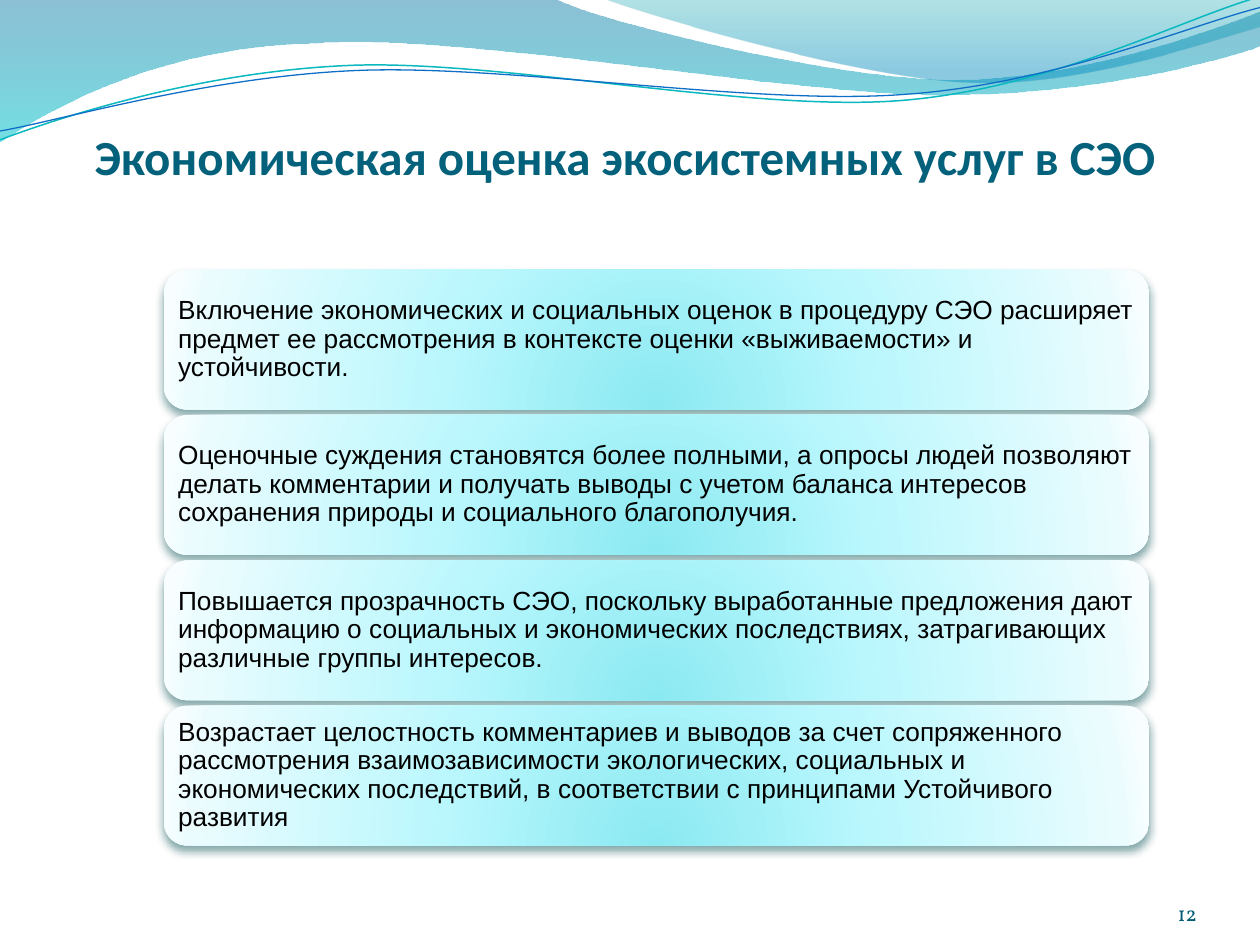
from lxml import etree
from pptx import Presentation
from pptx.dml.color import RGBColor
from pptx.enum.shapes import MSO_SHAPE
from pptx.enum.text import MSO_ANCHOR, MSO_AUTO_SIZE, PP_ALIGN
from pptx.oxml.ns import qn
from pptx.util import Inches, Pt

LEFT, RIGHT = PP_ALIGN.LEFT, PP_ALIGN.RIGHT
MIDDLE, BOTTOM = MSO_ANCHOR.MIDDLE, MSO_ANCHOR.BOTTOM
NO_AUTOFIT = MSO_AUTO_SIZE.NONE
ROUNDED = MSO_SHAPE.ROUNDED_RECTANGLE
TITLE_ONLY = 5

TITLE_TEAL = RGBColor(0x04, 0x61, 0x7B)
NUMBER_TEAL = RGBColor(0x04, 0x5D, 0x75)
BLACK = RGBColor(0x00, 0x00, 0x00)
AQUA = RGBColor(0x0A, 0xB8, 0xBF)
BLUE = RGBColor(0x0F, 0x6F, 0xC6)
SHADOW = RGBColor(0x02, 0x4B, 0x4E)
CARD_STOPS = [(0, RGBColor(0x8B, 0xE9, 0xF1), 100), (43, RGBColor(0xB9, 0xF7, 0xFD), 100),
              (93, RGBColor(0xEA, 0xFC, 0xFE), 100), (100, RGBColor(0xF8, 0xFE, 0xFF), 100)]
WIDE_STOPS = [(0, RGBColor(0x00, 0x74, 0xA1), 45), (100, RGBColor(0x00, 0xC6, 0xCF), 55)]
CORNER_STOPS = [(0, RGBColor(0x00, 0xA1, 0xA9), 30), (80, RGBColor(0x00, 0x8B, 0xBF), 45)]

WIDE_WAVE = [(0, 0), (4.4, -0.01),
             (4.76, 0.17, 6.64, 0.63, 7.58, 0.63), (8.53, 0.63, 9.58, 0.26, 10, 0.09),
             (10.01, 0.36),
             (9.83, 0.44, 8.7, 0.76, 7.46, 0.75), (6.22, 0.75, 3.82, 0.28, 2.57, 0.34),
             (1.29, 0.36, 0.46, 0.83, -0.01, 1.13)]
CORNER_WAVE = [(4.79, -0.01), (5.09, 0.11, 6.82, 0.62, 7.69, 0.65),
               (8.56, 0.69, 9.61, 0.32, 10, 0.21), (10, 0)]
AQUA_CURVE = [(0, 1.11), (0.48, 0.93, 1.58, 0.57, 2.77, 0.52),
              (3.95, 0.47, 5.93, 0.89, 7.13, 0.8), (8.33, 0.71, 9.38, 0.15, 9.98, -0.02)]
BLUE_CURVE = [(0, 1.04), (0.47, 0.96, 1.64, 0.61, 2.83, 0.56),
              (4.03, 0.51, 5.97, 0.84, 7.17, 0.75), (8.36, 0.67, 9.41, 0.21, 10, 0.06)]

BENEFITS = [
    "Включение экономических и социальных оценок в процедуру СЭО расширяет предмет ее "
    "рассмотрения в контексте оценки «выживаемости» и устойчивости.",
    "Оценочные суждения становятся более полными, а опросы людей позволяют делать комментарии "
    "и получать выводы с учетом баланса интересов сохранения природы и социального благополучия.",
    "Повышается прозрачность СЭО, поскольку выработанные предложения дают информацию о "
    "социальных и экономических последствиях, затрагивающих различные группы интересов.",
    "Возрастает целостность комментариев и выводов за счет сопряженного рассмотрения "
    "взаимозависимости экологических, социальных и экономических последствий, в соответствии "
    "с принципами Устойчивого развития",
]


def write(shape, text, *, size, font, color, bold=False, align=LEFT, anchor=MIDDLE,
          insets=(0, 0, 0, 0), spacing=None):
    frame = shape.text_frame
    frame.word_wrap = True
    frame.auto_size = NO_AUTOFIT
    frame.vertical_anchor = anchor
    (frame.margin_left, frame.margin_top,
     frame.margin_right, frame.margin_bottom) = map(Inches, insets)
    paragraph = frame.paragraphs[0]
    paragraph.alignment = align
    if spacing:
        paragraph.line_spacing = spacing
    run = paragraph.add_run()
    run.text = text
    run.font.size, run.font.name, run.font.bold = Pt(size), font, bold
    run.font.color.rgb = color


def add_color(parent, color, opacity):
    tint = etree.SubElement(parent, qn("a:srgbClr"), val=str(color))
    if opacity < 100:
        etree.SubElement(tint, qn("a:alpha"), val=str(opacity * 1000))


def fill_gradient(shape, stops, radial=False):
    shape.fill.background()
    properties = shape._element.spPr
    gradient = etree.Element(qn("a:gradFill"), rotWithShape="1")
    stop_list = etree.SubElement(gradient, qn("a:gsLst"))
    for position, color, opacity in stops:
        stop = etree.SubElement(stop_list, qn("a:gs"), pos=str(position * 1000))
        add_color(stop, color, opacity)
    if radial:
        circle = etree.SubElement(gradient, qn("a:path"), path="circle")
        etree.SubElement(circle, qn("a:fillToRect"), l="50000", t="130000", r="50000", b="-30000")
    else:
        etree.SubElement(gradient, qn("a:lin"), ang="5400000", scaled="1")
    properties.replace(properties.find(qn("a:noFill")), gradient)


def add_outline(slide, left, top, outline, close):
    points = [(left + Inches(x), top + Inches(y))
              for segment in outline for x, y in zip(segment[::2], segment[1::2])]
    builder = slide.shapes.build_freeform(*points[0])
    builder.add_line_segments(points[1:], close=close)
    shape = builder.convert_to_shape()
    shape.shadow.inherit = False
    straight = iter(list(shape._element.spPr.iter(qn("a:lnTo"))))
    for segment in outline[1:]:
        first = next(straight)
        if len(segment) == 6:
            bend = etree.Element(qn("a:cubicBezTo"))
            first.addprevious(bend)
            for line in (first, next(straight), next(straight)):
                bend.append(line[0])
                line.getparent().remove(line)
    return shape


def add_waves(slide, left, top):
    for outline, stops in ((WIDE_WAVE, WIDE_STOPS), (CORNER_WAVE, CORNER_STOPS)):
        wave = add_outline(slide, left, top, outline, True)
        wave.line.fill.background()
        fill_gradient(wave, stops)
    for outline, color, width in ((AQUA_CURVE, AQUA, 0.85), (BLUE_CURVE, BLUE, 0.75)):
        curve = add_outline(slide, left, top, outline, False)
        curve.fill.background()
        curve.line.color.rgb = color
        curve.line.width = Pt(width)


def add_title(slide, left, top, width, height):
    title = slide.shapes.title
    title.left, title.top, title.width, title.height = left, top, width, height
    write(title, "Экономическая оценка экосистемных услуг в СЭО", size=28, font="Calibri",
          color=TITLE_TEAL, bold=True, anchor=BOTTOM, insets=(0, 0.05, 0, 0))


def add_page_number(slide, left, top, width, height):
    number = slide.shapes.add_textbox(left, top, width, height)
    write(number, "12", size=12, font="Vollkorn", color=NUMBER_TEAL, align=RIGHT, anchor=BOTTOM)


def add_card(slide, text, left, top, width, height):
    card = slide.shapes.add_shape(ROUNDED, left, top, width, height)
    card.line.fill.background()
    fill_gradient(card, CARD_STOPS, radial=True)
    card.shadow.inherit = False
    effects = card._element.spPr.find(qn("a:effectLst"))
    shadow = etree.SubElement(effects, qn("a:outerShdw"), blurRad=str(Pt(4.5)),
                              dist=str(Pt(3)), dir="5400000", rotWithShape="0")
    add_color(shadow, SHADOW, 48)
    write(card, text, size=15, font="Arial", color=BLACK, insets=(0.06,) * 4, spacing=0.9)


def add_benefits(slide, left, top, width, height):
    card_height = Inches(1.11)
    pitch = (height - card_height) // (len(BENEFITS) - 1)
    for index, benefit in enumerate(BENEFITS):
        add_card(slide, benefit, left, top + index * pitch, width, card_height)


def main():
    deck = Presentation()
    deck.slide_width, deck.slide_height = Inches(10), Inches(7.5)
    slide = deck.slides.add_slide(deck.slide_layouts[TITLE_ONLY])
    add_waves(slide, Inches(0), Inches(0))
    add_title(slide, Inches(0.75), Inches(0.92), Inches(9.08), Inches(0.55))
    add_page_number(slide, Inches(8.67), Inches(6.95), Inches(0.83), Inches(0.4))
    add_benefits(slide, Inches(1.3), Inches(2.14), Inches(7.82), Inches(4.57))
    deck.save("out.pptx")


if __name__ == "__main__":
    main()
